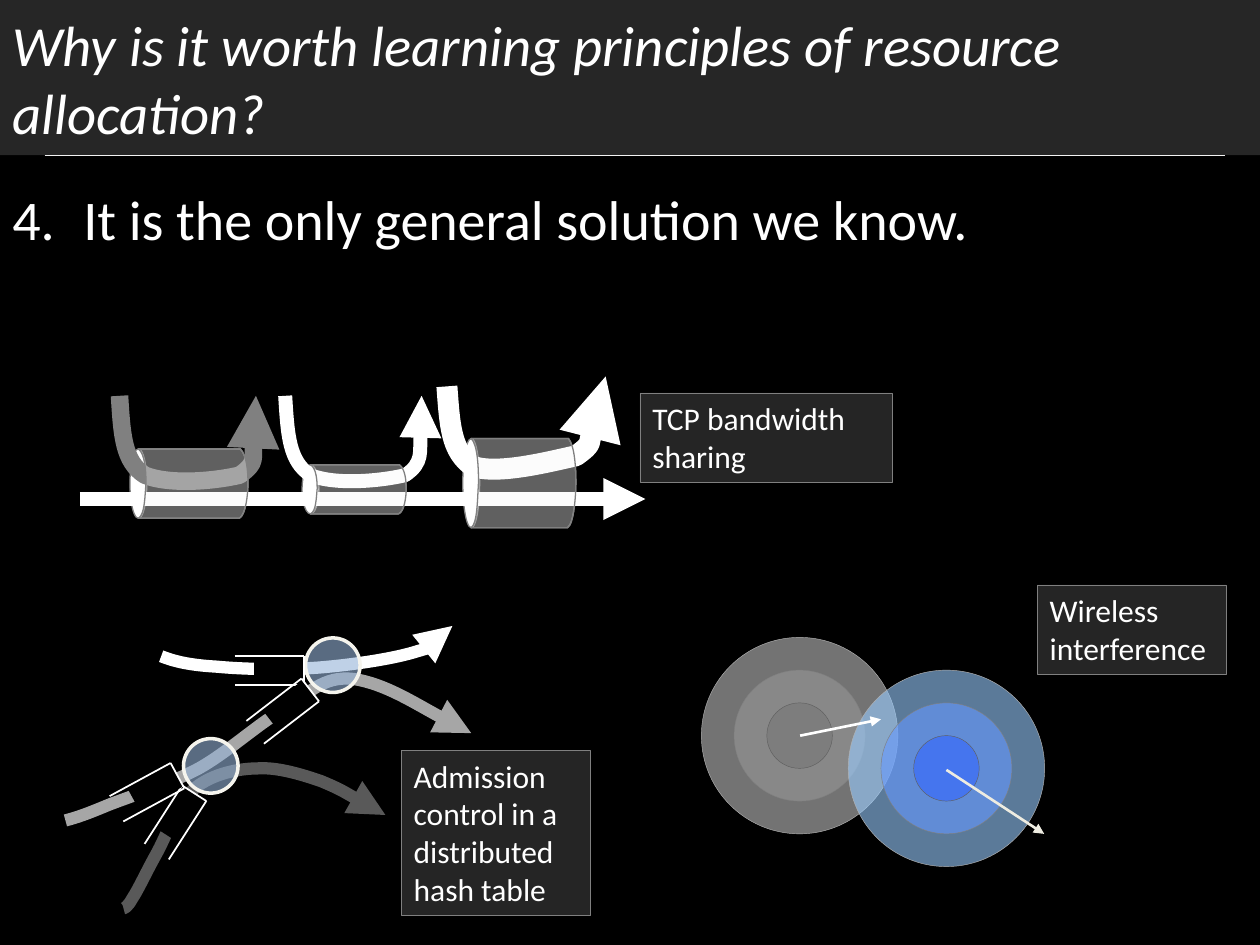
from math import cos, radians, sin

from lxml.etree import SubElement
from pptx import Presentation
from pptx.dml.color import RGBColor
from pptx.enum.shapes import MSO_CONNECTOR as CONN, MSO_SHAPE as SHAPE
from pptx.enum.text import MSO_ANCHOR as ANCHOR, PP_ALIGN as ALIGN
from pptx.oxml.ns import qn
from pptx.util import Cm, Pt


def rgb(value):
    return RGBColor.from_string(value)


class Canvas:
    font = "Calibri"
    ink = "FFFFFF"

    def __init__(self, prs):
        self.slide = prs.slides.add_slide(prs.slide_layouts[6])
        self.shapes = self.slide.shapes

    def background(self, color):
        fill = self.slide.background.fill
        fill.solid()
        fill.fore_color.rgb = rgb(color)

    def group(self):
        self.shapes = self.slide.shapes.add_group_shape().shapes

    def ungroup(self):
        self.shapes = self.slide.shapes

    def stroke(self, sp, color, width, arrow=False):
        sp.line.color.rgb = rgb(color)
        sp.line.width = Pt(width)
        if arrow:
            SubElement(sp.line._get_or_add_ln(), qn("a:tailEnd"), type="triangle")

    def paint(self, sp, fill, alpha, line, width, arrow=False):
        sp.shadow.inherit = False
        if fill:
            sp.fill.solid()
            sp.fill.fore_color.rgb = rgb(fill)
            if alpha < 100:
                clr = sp._element.spPr.find(qn("a:solidFill")).find(qn("a:srgbClr"))
                SubElement(clr, qn("a:alpha"), val=str(alpha * 1000))
        else:
            sp.fill.background()
        if line:
            self.stroke(sp, line, width, arrow)
        else:
            sp.line.fill.background()

    def shape(self, kind, x, y, w, h, fill, alpha=100, line=None, width=1):
        sp = self.shapes.add_shape(kind, Cm(x), Cm(y), Cm(w), Cm(h))
        self.paint(sp, fill, alpha, line, width)
        return sp

    def circle(self, cx, cy, radius, fill, line, width):
        self.shape(SHAPE.OVAL, cx - radius, cy - radius, 2 * radius, 2 * radius,
                   fill, 60, line, width)

    def outline(self, points, segments, close=False):
        start, *rest = [(Cm(x), Cm(y)) for x, y in points]
        builder = self.shapes.build_freeform(*start)
        builder.add_line_segments(rest, close=close)
        sp = builder.convert_to_shape()
        steps = list(sp._element.iter(qn("a:lnTo")))
        for segment in segments:
            step = steps.pop(0)
            if segment == "C":
                step.tag = qn("a:cubicBezTo")
                for other in (steps.pop(0), steps.pop(0)):
                    step.append(other[0])
                    other.getparent().remove(other)
        return sp

    def flow(self, points, color, width):
        sp = self.outline(points, "C" * (len(points) // 3))
        self.paint(sp, None, 100, color, width, arrow=True)

    def line(self, start, end, color, width, arrow=False):
        cn = self.shapes.add_connector(CONN.STRAIGHT, *map(Cm, (*start, *end)))
        self.stroke(cn, color, width, arrow)
        SubElement(cn._element.spPr, qn("a:effectLst"))

    def text(self, sp, text, size, italic=False, anchor=ANCHOR.TOP):
        tf = sp.text_frame
        tf.word_wrap = True
        tf.vertical_anchor = anchor
        p = tf.paragraphs[0]
        p.alignment = ALIGN.LEFT
        r = p.add_run()
        r.text = text
        r.font.name = self.font
        r.font.size = Pt(size)
        r.font.italic = italic
        r.font.color.rgb = rgb(self.ink)
        return p

    def label(self, text, x, y, w, h):
        sp = self.shape(SHAPE.RECTANGLE, x, y, w, h, "595959", 42, "808080", 0.25)
        self.text(sp, text, 18)

    def numbered(self, text, number, x, y, w, h):
        sp = self.shapes.add_textbox(Cm(x), Cm(y), Cm(w), Cm(h))
        p = self.text(sp, text, 32)
        p.space_before = Pt(6.4)
        pr = p._p.get_or_add_pPr()
        pr.set("marL", str(Cm(1.43)))
        pr.set("indent", str(-Cm(1.43)))
        SubElement(pr, qn("a:buFont"), typeface=self.font)
        SubElement(pr, qn("a:buAutoNum"), type="arabicPeriod", startAt=str(number))

    def pipe(self, x, y, w, h, fill, alpha):
        profile = [(0, 1), (0.92, 1), (0.98, 0.96), (1, 0.65), (1, 0.49),
                   (1, 0.33), (0.99, 0.09), (0.93, 0),
                   (0, 0), (0.06, 0.07), (0.07, 0.31), (0.07, 0.49),
                   (0.06, 0.67), (0.06, 0.95), (0, 1)]
        points = [(x + u * w, y + v * h) for u, v in profile]
        self.paint(self.outline(points, "LCCLCC", close=True), fill, alpha, "808080", 0.75)

    def gate(self, cx, cy, angle):
        sp = self.shape(SHAPE.RECTANGLE, cx - 0.48, cy - 0.23, 0.96, 0.46,
                        "000000", line="000000")
        sp.rotation = angle
        c, s = cos(radians(angle)), sin(radians(angle))
        corners = [(cx + u * c - v * s, cy + u * s + v * c)
                   for u, v in ((-0.89, -0.29), (0.51, -0.29), (0.51, 0.29), (-0.89, 0.29))]
        for start, end in zip(corners, corners[1:]):
            self.line(start, end, self.ink, 1)


def draw_pipes(cv):
    pipes = [(2.79, 9.05, 2.21, 1.4), (6.26, 9.37, 1.93, 0.99), (9.5, 8.84, 2.11, 1.8)]
    hook = [(2.41, 7.98), (2.46, 8.79), (2.49, 9.3), (2.92, 9.58), (3.43, 9.78),
            (4.32, 9.7), (4.83, 9.58), (5.21, 9.32), (5.16, 8.33), (5.16, 7.98)]
    wide_hook = [(9.01, 7.79), (9.07, 8.59), (9.09, 9.09), (9.53, 9.4), (10.03, 9.58),
                 (11.1, 9.3), (11.61, 9.19), (11.99, 8.92), (12.21, 7.95), (12.21, 7.59)]
    cv.group()
    for x, y, w, h in pipes:
        cv.pipe(x, y, w, h, "7F7F7F", 25)
        cv.shape(SHAPE.OVAL, x - 0.17, y, 0.34, h, "FFFFFF", line="808080", width=0.75)
    cv.line((1.61, 10.06), (13.01, 10.06), "FFFFFF", 8, arrow=True)
    cv.flow(hook, "808080", 10)
    cv.flow([(x + 3.34, y) for x, y in hook], "FFFFFF", 8)
    cv.flow(wide_hook, "FFFFFF", 12)
    for box in pipes:
        cv.pipe(*box, "F8F8F8", 30)


def draw_hash_table(cv):
    flows = {
        "FFFFFF": [(3.25, 13.23), (3.53, 13.34), (3.84, 13.41), (4.37, 13.44),
                   (4.88, 13.49), (5.72, 13.51), (6.4, 13.46), (7.06, 13.41),
                   (7.95, 13.28), (8.41, 13.13), (8.86, 13), (9.07, 12.65), (9.12, 12.62)],
        "A6A6A6": [(1.32, 16.54), (1.55, 16.48), (1.75, 16.41), (2.18, 16.23),
                   (2.64, 16.05), (3.43, 15.8), (4.01, 15.49), (4.6, 15.16),
                   (5.18, 14.61), (5.72, 14.3), (6.22, 14), (6.5, 13.61),
                   (7.14, 13.69), (7.77, 13.79), (9.12, 14.61), (9.5, 14.78)],
        "595959": [(2.49, 18.31), (2.51, 18.31), (2.57, 18.29), (2.67, 18.11),
                   (2.79, 17.93), (2.95, 17.58), (3.15, 17.22), (3.35, 16.87),
                   (3.58, 16.18), (3.94, 15.88), (4.29, 15.6), (4.8, 15.49),
                   (5.23, 15.49), (5.59, 15.47), (6.05, 15.6), (6.48, 15.75),
                   (6.91, 15.93), (7.77, 16.43), (7.77, 16.43)],
    }
    cv.group()
    for color, points in flows.items():
        cv.flow(points, color, 7)
    for cx, cy in ((6.71, 13.41), (4.25, 15.44)):
        cv.circle(cx, cy, 0.55, "95B3D7", "F5F4ED", 2)
    for gate in ((5.62, 13.52, 0), (5.85, 14.22, 322.4),
                 (3.64, 16.42, 302.7), (3.13, 15.88, 331.5)):
        cv.gate(*gate)


def draw_wireless(cv):
    stations = [((16.12, 14.83), ("C0C0C0", "969696", "777777")),
                ((19.08, 15.49), ("99CCFF", "6699FF", "3366FF"))]
    cv.group()
    for centre, fills in stations:
        for ring, fill, edge in zip((3, 2, 1), fills, ("B2B2B2", "808080", "5F5F5F")):
            cv.circle(*centre, ring * 0.66, fill, edge, 0.25)
    cv.line((16.13, 14.83), (17.76, 14.5), "FFFFFF", 1.5, arrow=True)
    cv.line((19.08, 15.52), (21.05, 16.81), "EEECE1", 1.5, arrow=True)


def main():
    prs = Presentation()
    prs.slide_width, prs.slide_height = Cm(25.4), Cm(19.05)
    cv = Canvas(prs)
    cv.background("000000")
    title = cv.shape(SHAPE.RECTANGLE, 0, 0, 25.4, 3.13, "262626")
    cv.text(title, "Why is it worth learning principles of resource allocation?",
            32.4, italic=True, anchor=ANCHOR.MIDDLE)
    cv.numbered("It is the only general solution we know.", 4, 0, 3.6, 25.4, 3.61)
    draw_pipes(cv)
    draw_hash_table(cv)
    draw_wireless(cv)
    cv.ungroup()
    cv.line((0.9, 3.13), (24.7, 3.13), "F2F2F2", 0.75)
    cv.label("TCP bandwidth sharing", 12.9, 7.92, 5.08, 1.8)
    cv.label("Admission control in a distributed hash table", 8.09, 15.13, 3.81, 3.33)
    cv.label("Wireless interference", 20.91, 11.79, 3.81, 1.8)
    prs.save("out.pptx")


if __name__ == "__main__":
    main()
